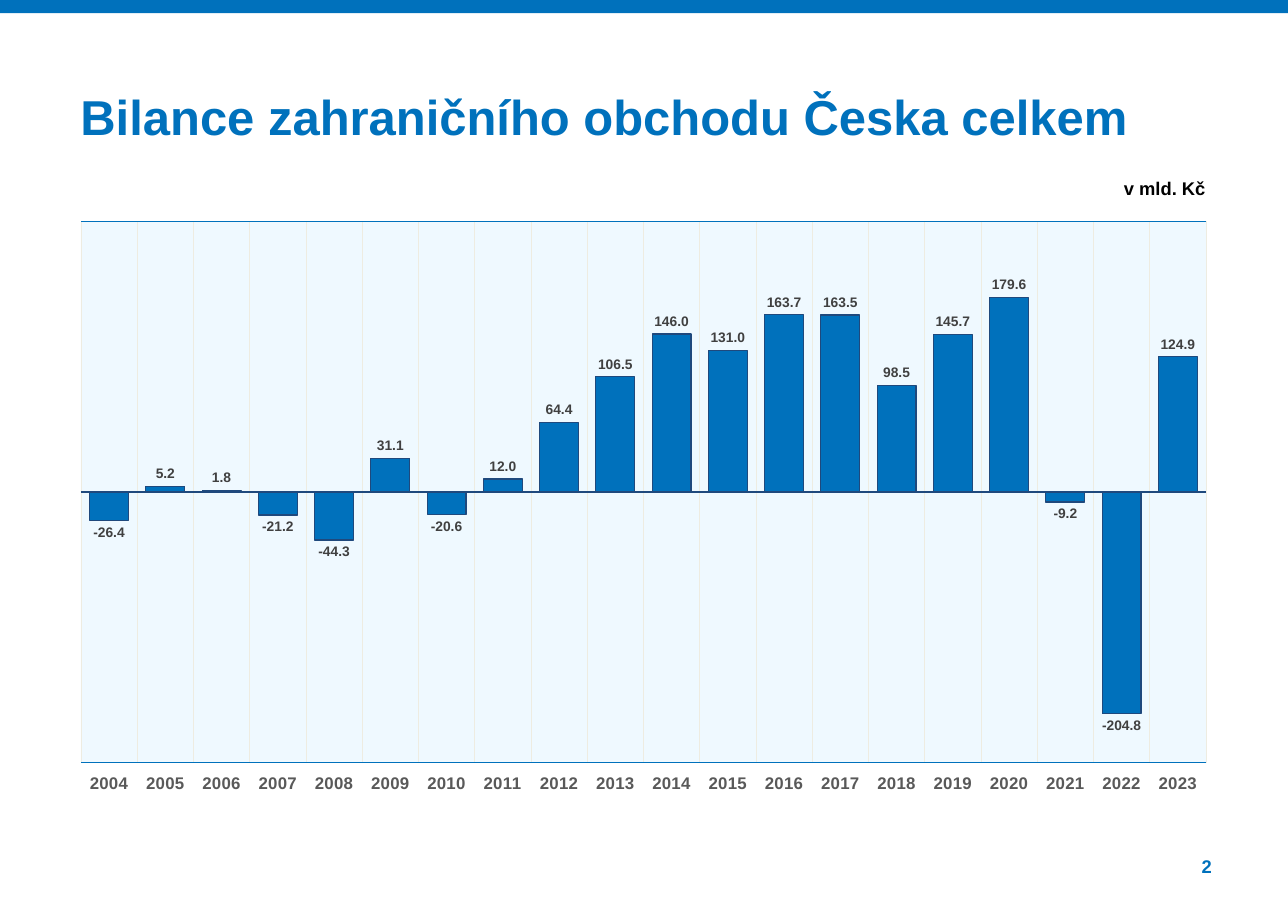
from dataclasses import dataclass

from pptx import Presentation
from pptx.chart.data import CategoryChartData as ChartData
from pptx.dml.color import RGBColor as Color
from pptx.enum.chart import XL_CHART_TYPE as ChartType
from pptx.enum.chart import XL_LABEL_POSITION as LabelPosition
from pptx.enum.chart import XL_TICK_LABEL_POSITION as TickLabels
from pptx.enum.chart import XL_TICK_MARK as TickMark
from pptx.enum.shapes import MSO_SHAPE as Shape
from pptx.enum.text import MSO_ANCHOR as Anchor
from pptx.enum.text import MSO_AUTO_SIZE as AutoSize
from pptx.enum.text import PP_ALIGN as Align
from pptx.oxml import parse_xml
from pptx.oxml.ns import nsdecls, qn
from pptx.util import Inches, Pt


@dataclass(frozen=True)
class Theme:
    """Colours, font and type sizes of the slide."""
    blue: str = "0071BC"
    navy: str = "1F497D"
    pale: str = "EFF9FF"
    cream: str = "EEECE1"
    black: str = "000000"
    label: str = "404040"
    axis: str = "595959"
    font: str = "Arial"
    chart_font: str = "Calibri"
    title_size: int = 32
    note_size: int = 12
    axis_size: int = 11
    chart_size: int = 10
    label_size: int = 9


THEME = Theme()
WIDTH, HEIGHT = Inches(11.69), Inches(8.27)
LIMIT = 250
YEARS = range(2004, 2024)
BALANCE = (-26.4, 5.2, 1.8, -21.2, -44.3, 31.1, -20.6, 12.0, 64.4, 106.5,
           146.0, 131.0, 163.7, 163.5, 98.5, 145.7, 179.6, -9.2, -204.8, 124.9)


def area(left, top, width, height):
    """Turn percentages of the slide into a box of lengths."""
    return (int(WIDTH * left / 100), int(HEIGHT * top / 100),
            int(WIDTH * width / 100), int(HEIGHT * height / 100))


def style_font(font, size, color, name=THEME.font, bold=True):
    """Set the face, size, weight and colour of a font."""
    font.name, font.size, font.bold = name, Pt(size), bold
    font.color.rgb = Color.from_string(color)


def style_line(line, color, width=0.75):
    """Set the colour and width of a line."""
    line.color.rgb = Color.from_string(color)
    line.width = Pt(width)


def write_text(box, text, size, color, align=Align.LEFT, inset=0.0):
    """Fill a text shape with one formatted paragraph."""
    frame = box.text_frame
    frame.word_wrap, frame.auto_size = True, AutoSize.NONE
    frame.vertical_anchor = Anchor.TOP
    frame.margin_left = frame.margin_right = Inches(inset)
    frame.margin_top = frame.margin_bottom = Inches(inset / 2)
    para = frame.paragraphs[0]
    para.alignment = align
    para.space_before, para.line_spacing = Pt(0), 1.0
    span = para.add_run()
    span.text = text
    style_font(span.font, size, color)


def add_band(page, box):
    """Draw the blue band across the top."""
    band = page.shapes.add_shape(Shape.RECTANGLE, *box)
    band.shadow.inherit = False
    band.fill.solid()
    band.fill.fore_color.rgb = Color.from_string(THEME.blue)
    band.line.fill.background()


def add_title(page, box, text):
    """Place the heading in the title placeholder."""
    title = page.shapes.title
    title.left, title.top, title.width, title.height = box
    write_text(title, text, THEME.title_size, THEME.blue)


def add_note(page, box, text, color, inset=0.0):
    """Place a small right-aligned text."""
    note = page.shapes.add_textbox(*box)
    write_text(note, text, THEME.note_size, color, Align.RIGHT, inset)


def shape_plot_area(chart, left, top, width, height):
    """Fix the inner plot area by shares of the chart and tint it."""
    plot_area = chart._chartSpace.find(f".//{qn('c:plotArea')}")
    for layout in plot_area.findall(qn("c:layout")):
        plot_area.remove(layout)
    shares = {"x": left, "y": top, "w": width, "h": height}
    modes = "".join(f'<c:{key}Mode val="edge"/>' for key in "xy")
    values = "".join(f'<c:{key} val="{share}"/>' for key, share in shares.items())
    plot_area.insert(0, parse_xml(
        f'<c:layout {nsdecls("c")}><c:manualLayout><c:layoutTarget val="inner"/>'
        f'{modes}{values}</c:manualLayout></c:layout>'))
    plot_area.append(parse_xml(
        f'<c:spPr {nsdecls("c", "a")}><a:solidFill><a:srgbClr val="{THEME.pale}"/>'
        f'</a:solidFill><a:ln><a:noFill/></a:ln></c:spPr>'))


def style_axes(chart):
    """Format the year axis and hide the value axis."""
    years, values = chart.category_axis, chart.value_axis
    years.tick_label_position = TickLabels.LOW
    years.major_tick_mark = years.minor_tick_mark = TickMark.NONE
    years.has_major_gridlines = True
    style_line(years.major_gridlines.format.line, THEME.cream, 0.5)
    style_line(years.format.line, THEME.navy)
    style_font(years.tick_labels.font, THEME.axis_size, THEME.axis)
    values.minimum_scale, values.maximum_scale = -LIMIT, LIMIT
    values.major_unit = 2 * LIMIT
    values.has_major_gridlines = True
    style_line(values.major_gridlines.format.line, THEME.blue)
    values.tick_labels.number_format = "0.0"
    values.tick_labels.number_format_is_linked = False
    values.visible = False


def style_columns(plot):
    """Format the columns and their value labels."""
    plot.gap_width, plot.overlap, plot.vary_by_categories = 45, -27, False
    columns = plot.series[0]
    columns.invert_if_negative = False
    columns.format.fill.solid()
    columns.format.fill.fore_color.rgb = Color.from_string(THEME.blue)
    style_line(columns.format.line, THEME.navy)
    labels = columns.data_labels
    labels.show_value = True
    labels.position = LabelPosition.OUTSIDE_END
    labels.number_format, labels.number_format_is_linked = "#,##0.0", False
    style_font(labels.font, THEME.label_size, THEME.label)


def add_balance_chart(page, box):
    """Chart the yearly trade balance."""
    data = ChartData()
    data.categories = [str(year) for year in YEARS]
    data.add_series("Series 1", BALANCE)
    chart = page.shapes.add_chart(ChartType.COLUMN_CLUSTERED, *box, data).chart
    chart.has_legend = chart.has_title = False
    style_font(chart.font, THEME.chart_size, THEME.black, THEME.chart_font, False)
    style_axes(chart)
    style_columns(chart.plots[0])
    shape_plot_area(chart, 0, 0.03, 0.99, 0.92)


def build_balance_slide(deck):
    """Compose the trade balance slide."""
    page = deck.slides.add_slide(deck.slide_layouts[5])
    add_band(page, area(0, 0, 100, 1.45))
    add_note(page, area(87.42, 93.83, 6.67, 2.54), "2", THEME.blue)
    add_title(page, area(6.24, 9.55, 82.04, 15.72),
              "Bilance zahraničního obchodu Česka celkem")
    add_balance_chart(page, area(6.24, 22.37, 88.28, 64.69))
    add_note(page, area(83.66, 18.86, 10.78, 3.63), "v mld. Kč", THEME.black, 0.1)


def main():
    """Build and save the deck."""
    deck = Presentation()
    deck.slide_width, deck.slide_height = WIDTH, HEIGHT
    build_balance_slide(deck)
    deck.save("out.pptx")


if __name__ == "__main__":
    main()
